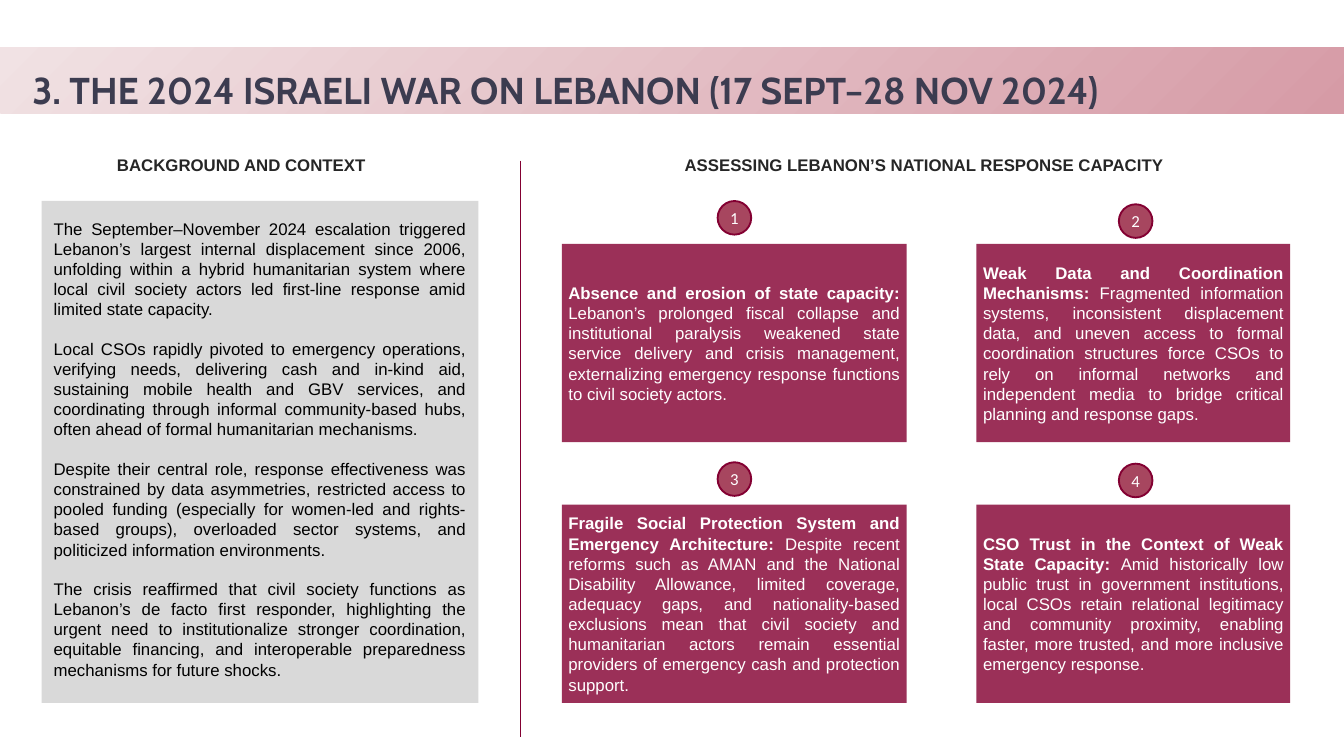
from collections import namedtuple
from dataclasses import dataclass

from lxml import etree
from pptx import Presentation
from pptx import util as u
from pptx.dml.color import RGBColor
from pptx.enum import shapes, text
from pptx.oxml import ns

Pt = u.Pt
Box = namedtuple("Box", "left top width height")
Card = namedtuple("Card", "heading body badge_offset")


@dataclass(frozen=True)
class Theme:
    banner_light: str = "F1E2E4"
    banner_dark: str = "D69BA6"
    title: str = "3C3C50"
    heading: str = "262626"
    accent: str = "830032"
    card: str = "840132"
    card_opacity: int = 81
    badge: str = "A7465F"
    panel: str = "D9D9D9"
    body: str = "000000"
    white: str = "FFFFFF"
    title_font: str = "Cabin"
    body_font: str = "Arial"
    badge_font: str = "Calibri"
    title_size: int = 40
    body_size: int = 18


THEME = Theme()

TITLE = "3. THE 2024 ISRAELI WAR ON LEBANON (17 SEPT–28 NOV 2024)"
BACKGROUND = [
    "The September–November 2024 escalation triggered Lebanon’s largest internal displacement since 2006, "
    "unfolding within a hybrid humanitarian system where local civil society actors led first-line response "
    "amid limited state capacity.",
    "Local CSOs rapidly pivoted to emergency operations, verifying needs, delivering cash and in-kind aid, "
    "sustaining mobile health and GBV services, and coordinating through informal community-based hubs, "
    "often ahead of formal humanitarian mechanisms.",
    "Despite their central role, response effectiveness was constrained by data asymmetries, restricted access "
    "to pooled funding (especially for women-led and rights-based groups), overloaded sector systems, and "
    "politicized information environments.",
    "The crisis reaffirmed that civil society functions as Lebanon’s de facto first responder, highlighting the "
    "urgent need to institutionalize stronger coordination, equitable financing, and interoperable "
    "preparedness mechanisms for future shocks.",
]
CARDS = [
    Card("Absence and erosion of state capacity: ",
         "Lebanon’s prolonged fiscal collapse and institutional paralysis weakened state service delivery and "
         "crisis management, externalizing emergency response functions to civil society actors.",
         (167, -46)),
    Card("Weak Data and Coordination Mechanisms: ",
         "Fragmented information systems, inconsistent displacement data, and uneven access to formal "
         "coordination structures force CSOs to rely on informal networks and independent media to bridge "
         "critical planning and response gaps.",
         (152.6, -42.5)),
    Card("Fragile Social Protection System and Emergency Architecture: ",
         "Despite recent reforms such as AMAN and the National Disability Allowance, limited coverage, adequacy "
         "gaps, and nationality-based exclusions mean that civil society and humanitarian actors remain "
         "essential providers of emergency cash and protection support.",
         (167, -45.4)),
    Card("CSO Trust in the Context of Weak State Capacity: ",
         "Amid historically low public trust in government institutions, local CSOs retain relational legitimacy "
         "and community proximity, enabling faster, more trusted, and more inclusive emergency response.",
         (152.6, -43.9)),
]
CARD_COLUMNS = [(601.9, 369.4), (1046.2, 336.2)]
CARD_ROWS = [261.4, 540.7]
CARD_HEIGHT = 212.4
BADGE_SIZE = 36


def rgb(code):
    return RGBColor.from_string(code)


def points(box):
    return [Pt(length) for length in box]


def style(font, color, name=THEME.body_font, size=THEME.body_size, bold=False):
    font.name = name
    font.size = Pt(size)
    font.bold = bold
    font.color.rgb = rgb(color)


def add_block(parent, kind, box, color):
    block = parent.add_shape(kind, *points(box))
    block.shadow.inherit = False
    block.fill.solid()
    block.fill.fore_color.rgb = rgb(color)
    block.line.fill.background()
    return block


def add_banner(slide, box, title_box):
    banner = add_block(slide.shapes, shapes.MSO_SHAPE.RECTANGLE, box, THEME.banner_light)
    banner.fill.gradient()
    banner.fill.gradient_angle = 315
    for stop, color in zip(banner.fill.gradient_stops, (THEME.banner_light, THEME.banner_dark)):
        stop.color.rgb = rgb(color)

    title = slide.shapes.title
    title.left, title.top, title.width, title.height = points(title_box)
    frame = title.text_frame
    frame.text = TITLE
    frame.margin_left = frame.margin_right = frame.margin_top = frame.margin_bottom = 0
    frame.vertical_anchor = text.MSO_ANCHOR.TOP
    frame.auto_size = text.MSO_AUTO_SIZE.NONE
    line = frame.paragraphs[0]
    line.alignment = text.PP_ALIGN.LEFT
    line.line_spacing = Pt(67.2)
    style(line.runs[0].font, THEME.title, THEME.title_font, THEME.title_size, True)
    banner._element.addnext(title._element)


def add_divider(slide, x, top, bottom):
    divider = slide.shapes.add_connector(shapes.MSO_CONNECTOR.STRAIGHT, Pt(x), Pt(top), Pt(x), Pt(bottom))
    divider.line.color.rgb = rgb(THEME.accent)
    divider.line.width = Pt(0.75)
    etree.SubElement(divider._element.spPr, ns.qn("a:effectLst"))


def add_heading(slide, box, wording):
    frame = slide.shapes.add_textbox(*points(box)).text_frame
    frame.word_wrap = True
    frame.text = wording
    heading = frame.paragraphs[0]
    heading.alignment = text.PP_ALIGN.CENTER
    heading.line_spacing = 1.15
    style(heading.runs[0].font, THEME.heading, bold=True)


def add_background(slide, box):
    group = slide.shapes.add_group_shape()
    add_block(group.shapes, shapes.MSO_SHAPE.RECTANGLE, box, THEME.panel)
    story_box = Box(box.left + 5.8, box.top + 15.1, box.width - 12.2, box.height - 23)
    frame = group.shapes.add_textbox(*points(story_box)).text_frame
    frame.word_wrap = True
    frame.text = "\n".join(BACKGROUND)
    for index, paragraph in enumerate(frame.paragraphs):
        paragraph.alignment = text.PP_ALIGN.JUSTIFY
        if index:
            paragraph.space_before = Pt(20.7)
        style(paragraph.runs[0].font, THEME.body)


def add_badge(slide, box, number):
    badge = add_block(slide.shapes, shapes.MSO_SHAPE.OVAL, box, THEME.badge)
    badge.line.color.rgb = rgb(THEME.accent)
    badge.line.width = Pt(2)
    frame = badge.text_frame
    frame.margin_left = frame.margin_right = 0
    frame.vertical_anchor = text.MSO_ANCHOR.MIDDLE
    frame.text = str(number)
    frame.paragraphs[0].alignment = text.PP_ALIGN.CENTER
    style(frame.paragraphs[0].runs[0].font, THEME.white, THEME.badge_font)


def add_card(slide, box, number, card):
    panel = add_block(slide.shapes, shapes.MSO_SHAPE.RECTANGLE, box, THEME.card)
    color = panel._element.spPr.find(ns.qn("a:solidFill"))[0]
    etree.SubElement(color, ns.qn("a:alpha"), val=str(THEME.card_opacity * 1000))
    frame = panel.text_frame
    frame.word_wrap = True
    frame.vertical_anchor = text.MSO_ANCHOR.MIDDLE
    finding = frame.paragraphs[0]
    finding.alignment = text.PP_ALIGN.JUSTIFY
    for wording, bold in ((card.heading, True), (card.body, False)):
        run = finding.add_run()
        run.text = wording
        style(run.font, THEME.white, bold=bold)
    dx, dy = card.badge_offset
    add_badge(slide, Box(box.left + dx, box.top + dy, BADGE_SIZE, BADGE_SIZE), number)


def main():
    deck = Presentation()
    deck.slide_width, deck.slide_height = Pt(1440), Pt(810)
    slide = deck.slides.add_slide(deck.slide_layouts[5])
    add_banner(slide, Box(0, 50.4, 1440, 70.9), Box(34.6, 52.6, 1357.2, 61.9))
    add_divider(slide, 558, 172, 789.8)
    add_heading(slide, Box(720, 159.1, 540, 31), "ASSESSING LEBANON’S NATIONAL RESPONSE CAPACITY")
    add_heading(slide, Box(60.5, 159.1, 396, 31), "BACKGROUND AND CONTEXT")
    add_background(slide, Box(44.6, 215.3, 468, 537.8))
    for index, card in enumerate(CARDS):
        row, column = divmod(index, len(CARD_COLUMNS))
        left, width = CARD_COLUMNS[column]
        add_card(slide, Box(left, CARD_ROWS[row], width, CARD_HEIGHT), index + 1, card)
    deck.save("out.pptx")


if __name__ == "__main__":
    main()
